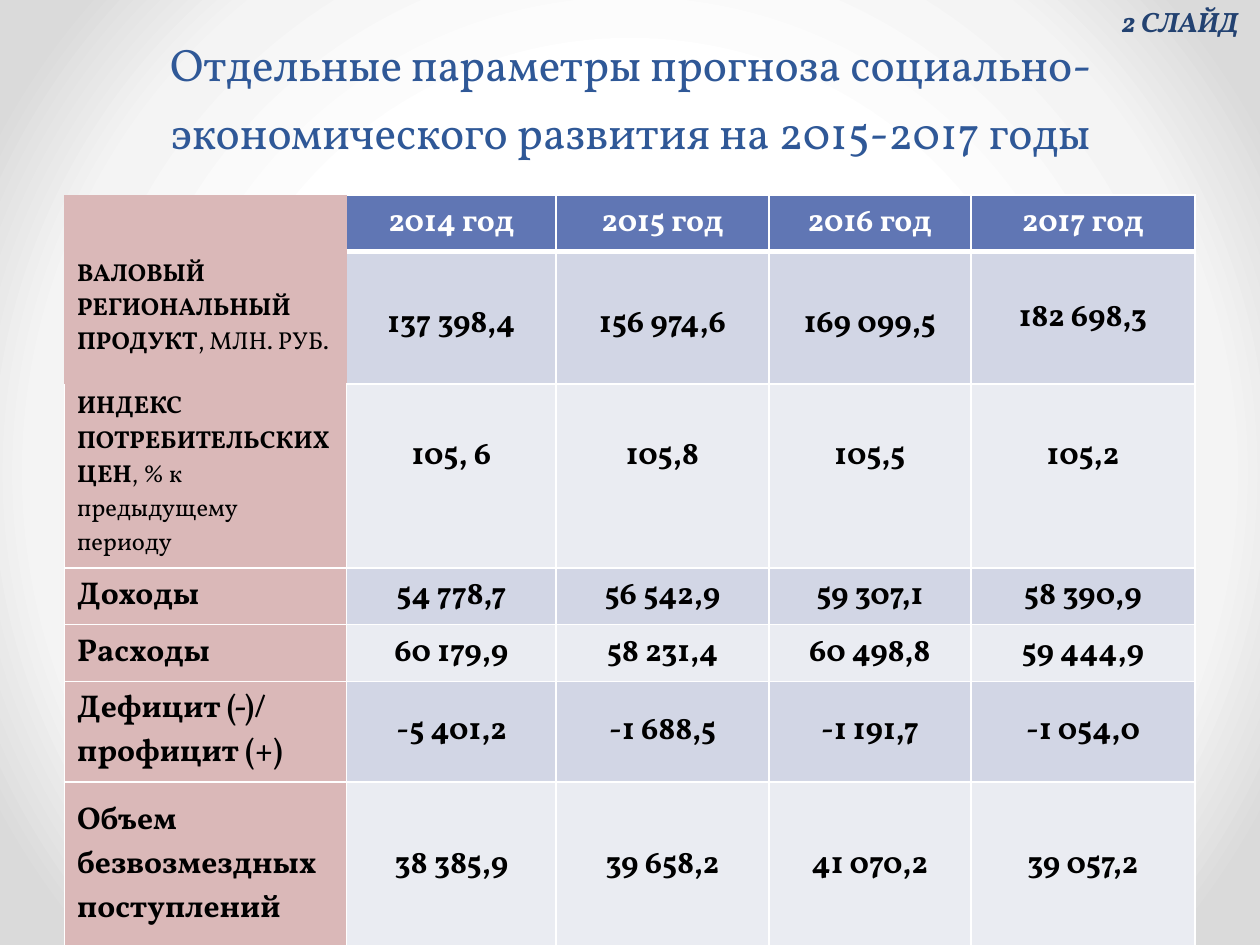
from dataclasses import dataclass

from lxml import etree
from pptx import Presentation, oxml, util as u
from pptx.dml.color import RGBColor
from pptx.enum import text
from pptx.oxml import ns

CENTER, LEFT = text.PP_ALIGN.CENTER, text.PP_ALIGN.LEFT
TOP, MIDDLE, BOTTOM = (text.MSO_ANCHOR.TOP, text.MSO_ANCHOR.MIDDLE,
                       text.MSO_ANCHOR.BOTTOM)


@dataclass(frozen=True)
class Theme:
    font: str = "Vollkorn"
    title: str = "2F5897"
    tag: str = "234271"
    ink: str = "000000"
    white: str = "FFFFFF"
    header: str = "6076B4"
    label: str = "DAB8B8"
    bands: tuple = ("D2D6E5", "EAECF2")
    glow: tuple = ((50, "FFFFFF"), (76, "F4F4F4"), (92, "DADADA"))
    title_size: int = 26
    table_size: int = 18
    tag_size: int = 16
    small_size: int = 14


def write(p, content, font, size, color, bold=False, italic=False, align=LEFT):
    """Add one formatted run to a paragraph."""
    p.alignment = align
    r = p.add_run()
    r.text = content
    f = r.font
    f.name, f.size, f.bold, f.italic = font, u.Pt(size), bold, italic
    f.color.rgb = RGBColor.from_string(color)


class Deck:
    def __init__(self, theme):
        self.t = theme
        self.prs = Presentation()
        self.prs.slide_width, self.prs.slide_height = u.Cm(25.4), u.Cm(19.05)
        self.s = self.prs.slides.add_slide(self.prs.slide_layouts[5])

    def background(self):
        stops = "".join(f'<a:gs pos="{pos * 1000}"><a:srgbClr val="{c}"/></a:gs>'
                        for pos, c in self.t.glow)
        bg = oxml.parse_xml(
            f'<p:bg {ns.nsdecls("p", "a")}><p:bgPr><a:gradFill rotWithShape="1">'
            f'<a:gsLst>{stops}</a:gsLst><a:path path="circle">'
            '<a:fillToRect l="50000" t="50000" r="50000" b="50000"/></a:path>'
            '</a:gradFill><a:effectLst/></p:bgPr></p:bg>')
        self.s.element.cSld.insert(0, bg)

    def title(self, content, left, top, width, height):
        sp = self.s.shapes.title
        sp.left, sp.top, sp.width, sp.height = map(u.Cm, (left, top, width, height))
        tf = sp.text_frame
        tf.vertical_anchor, tf.word_wrap = BOTTOM, True
        tf.auto_size = text.MSO_AUTO_SIZE.NONE
        p = tf.paragraphs[0]
        p.line_spacing = u.Pt(39)
        write(p, content, self.t.font, self.t.title_size, self.t.title, align=CENTER)

    def tag(self, content, left, top, width, height):
        sp = self.s.shapes.add_textbox(*map(u.Cm, (left, top, width, height)))
        tf = sp.text_frame
        tf.word_wrap, tf.margin_left = True, u.Cm(0.46)
        write(tf.paragraphs[0], content, self.t.font, self.t.tag_size, self.t.tag,
              bold=True, italic=True)

    def table(self, left, top, cols, rows):
        shape = self.s.shapes.add_table(len(rows), len(cols), *map(
            u.Cm, (left, top, sum(cols), sum(rows))))
        tbl = shape.table
        tbl.horz_banding = False
        for col, width in zip(tbl.columns, cols):
            col.width = u.Cm(width)
        for row, height in zip(tbl.rows, rows):
            row.height = u.Cm(height)
        return tbl

    def cell(self, c, lines, fill, borders, color, align=LEFT, anchor=MIDDLE,
             drop=0.13):
        """Fill a cell; each line is a list of (words, size, bold)."""
        self.borders(c, borders)
        c.fill.solid()
        c.fill.fore_color.rgb = RGBColor.from_string(fill)
        c.vertical_anchor, c.margin_top = anchor, u.Cm(drop)
        for i, line in enumerate(lines):
            tf = c.text_frame
            p = tf.add_paragraph() if i else tf.paragraphs[0]
            for words, size, bold in line:
                write(p, words, self.t.font, size, color, bold, align=align)

    def borders(self, c, widths):
        tc_pr = c._tc.get_or_add_tcPr()
        for side, width in zip("LRTB", widths):
            ln = etree.SubElement(tc_pr, ns.qn(f"a:ln{side}"), w=str(u.Pt(width)))
            if width:
                fill = etree.SubElement(ln, ns.qn("a:solidFill"))
                etree.SubElement(fill, ns.qn("a:srgbClr"), val=self.t.white)
            else:
                etree.SubElement(ln, ns.qn("a:noFill"))


def main():
    t = Theme()
    deck = Deck(t)
    deck.background()
    deck.title("Отдельные параметры прогноза социально-экономического развития "
               "на 2015-2017 годы", 1.3, 1.12, 22.86, 2.21)

    # Row labels, one list of runs per paragraph
    big, small = t.table_size, t.small_size
    labels = [
        [[("ВАЛОВЫЙ РЕГИОНАЛЬНЫЙ ПРОДУКТ", small, True),
          (", МЛН. РУБ.", small, False)]],
        [[("ИНДЕКС ПОТРЕБИТЕЛЬСКИХ ЦЕН", small, True),
          (", % к предыдущему периоду", small, False)]],
        [[("Доходы", big, True)]],
        [[("Расходы", big, True)]],
        [[("Дефицит (-)/", big, True)], [("профицит (+)", big, True)]],
        [[("Объем безвозмездных поступлений", big, True)]],
    ]
    values = [
        ["137 398,4", "156 974,6", "169 099,5", "182 698,3"],
        ["105, 6", "105,8", "105,5", "105,2"],
        ["54 778,7", "56 542,9", "59 307,1", "58 390,9"],
        ["60 179,9", "58 231,4", "60 498,8", "59 444,9"],
        ["-5 401,2", "-1 688,5", "-1 191,7", "-1 054,0"],
        ["38 385,9", "39 658,2", "41 070,2", "39 057,2"],
    ]
    tbl = deck.table(1.3, 3.93, cols=[5.69, 4.22, 4.29, 4.07, 4.52],
                     rows=[1.04, 2.67, 3.28, 1.04, 1.04, 1.8, 3.35])

    # Header row; the first two label cells read as one block without lines
    deck.cell(tbl.cell(0, 0), [], t.label, (0, 0, 0, 0), t.ink)
    for j in range(1, 5):
        deck.cell(tbl.cell(0, j), [[(f"{2013 + j} год", big, True)]], t.header,
                  (int(j > 1), 1, 1, 3), t.white, CENTER, TOP)

    # Body rows with alternating bands; the two tall rows hang from the top
    for i, (label, numbers) in enumerate(zip(labels, values), 1):
        tall = i < 3
        edges = (0, 0, 0, 0) if i == 1 else (1, 1, int(i > 2), 1)
        deck.cell(tbl.cell(i, 0), label, t.label, edges, t.ink,
                  anchor=TOP if tall else MIDDLE)
        for j, number in enumerate(numbers, 1):
            hung = tall and (i, j) != (1, 4)
            deck.cell(tbl.cell(i, j), [[(number, big, True)]], t.bands[(i - 1) % 2],
                      (int((i, j) != (1, 1)), 1, 1, 1), t.ink, CENTER,
                      TOP if hung else MIDDLE, 1.02 if hung else 0.13)

    # Slide number tag
    deck.tag("2 СЛАЙД", 22.15, -0.03, 3.45, 0.94)
    deck.prs.save("out.pptx")


if __name__ == "__main__":
    main()
